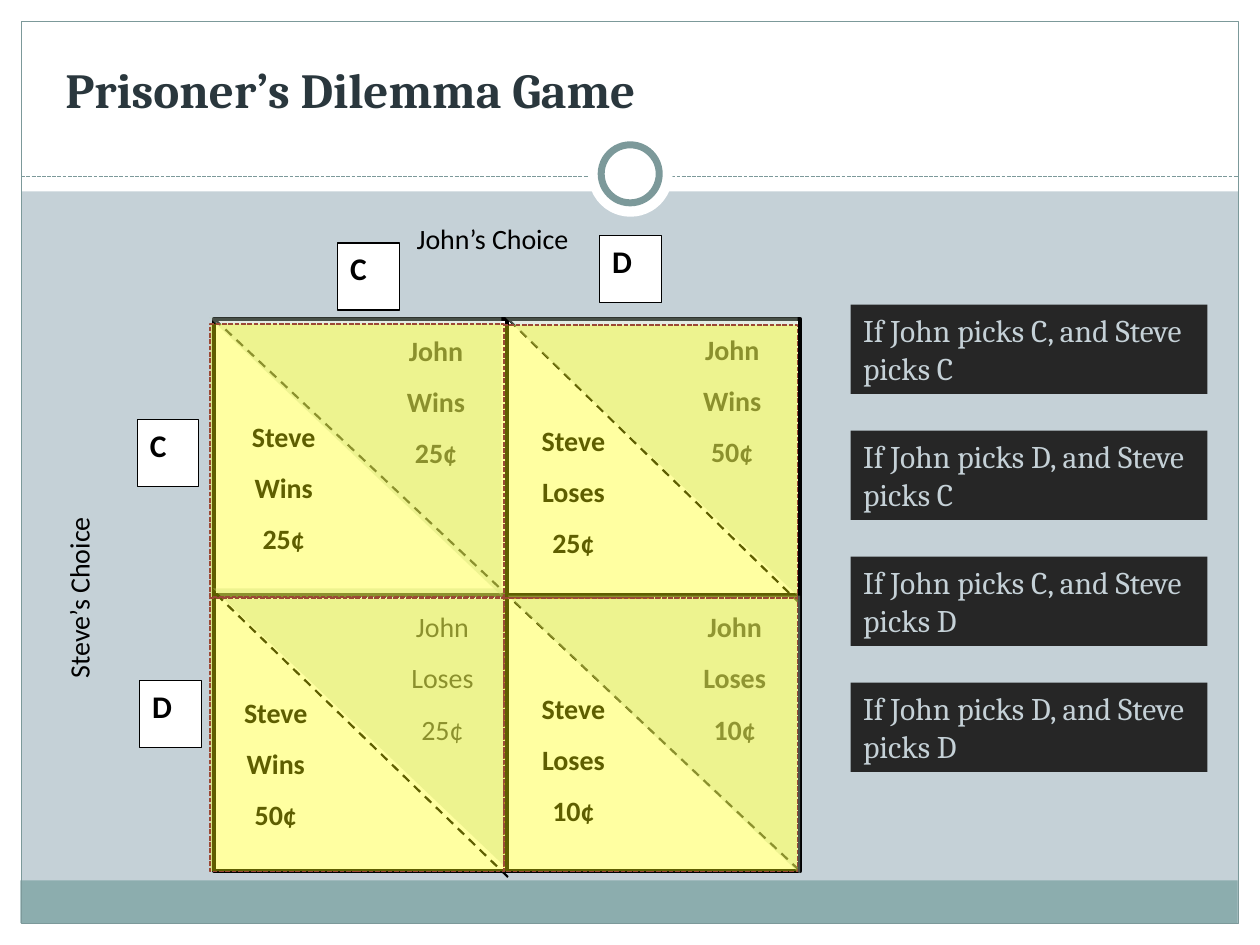
from pptx import Presentation
from pptx.dml.color import RGBColor
from pptx.enum.dml import MSO_LINE_DASH_STYLE as Dash
from pptx.enum.shapes import MSO_CONNECTOR as Link, MSO_SHAPE as Shape
from pptx.enum.text import MSO_ANCHOR as Anchor, MSO_AUTO_SIZE as Fit, PP_ALIGN as Align
from pptx.oxml.ns import qn
from pptx.util import Cm, Pt
from lxml.etree import SubElement

rgb = RGBColor.from_string
BLACK, WHITE, TEAL, MIST = "000000", "FFFFFF", "7C999A", "C5D1D7"


def paint(part, fill=None, alpha=None, line=None, width=0.75, dash=None):
    part.shadow.inherit = False
    if fill:
        part.fill.solid()
        part.fill.fore_color.rgb = rgb(fill)
        if alpha:
            color = part.fill._xPr.find(qn("a:solidFill"))[0]
            SubElement(color, qn("a:alpha"), val=str(alpha * 1000))
    else:
        part.fill.background()
    if line:
        part.line.color.rgb = rgb(line)
        part.line.width = Pt(width)
        part.line.dash_style = dash
    else:
        part.line.fill.background()


def write(part, lines, color=BLACK, align=Align.LEFT, after=10, frame=None, **font):
    text = part.text_frame
    frame_format = {"word_wrap": True, "vertical_anchor": Anchor.TOP} | (frame or {})
    for key, value in frame_format.items():
        setattr(text, key, value)
    text.text = "\n".join(lines)
    font_format = {"name": "Calibri", "size": Pt(16), "bold": False} | font
    for paragraph in text.paragraphs:
        paragraph.alignment = align
        paragraph.space_after = Pt(after)
        run_font = paragraph.runs[0].font
        run_font.color.rgb = rgb(color)
        for key, value in font_format.items():
            setattr(run_font, key, value)


deck = Presentation()
deck.slide_width, deck.slide_height = Cm(25.4), Cm(19.05)
slide = deck.slides.add_slide(deck.slide_layouts[6])
slide.background.fill.solid()
slide.background.fill.fore_color.rgb = rgb(MIST)
shapes = slide.shapes

borders = [
    ((0, 18.62, 25.4, 0.43), {"fill": WHITE}),
    ((0, 0, 25.4, 3.86), {"fill": WHITE}),
    ((0, 0, 0.43, 19.05), {"fill": WHITE}),
    ((24.97, 0, 0.43, 19.05), {"fill": WHITE}),
    ((0.41, 17.75, 24.54, 0.86), {"fill": "8CADAE"}),
    ((0.43, 0.43, 24.54, 18.19), {"line": TEAL}),
]
for box, look in borders:
    paint(shapes.add_shape(Shape.RECTANGLE, *map(Cm, box)), **look)

left, top, width, height = 4.32, 6.43, 11.81, 11.13
right, bottom = left + width, top + height
middle_x, middle_y = left + width / 2, top + height / 2

header_rule = shapes.add_connector(Link.STRAIGHT, Cm(0.43), Cm(3.56), Cm(24.97), Cm(3.56))
for box, look in [((11.86, 2.67, 1.7, 1.7), {}),
                  ((12.12, 2.92, 1.17, 1.17), {"line": TEAL, "width": 4})]:
    paint(shapes.add_shape(Shape.OVAL, *map(Cm, box)), fill=WHITE, **look)

board = shapes.add_shape(Shape.RECTANGLE, Cm(left), Cm(top), Cm(width), Cm(height))
paint(board, WHITE, line=BLACK, width=2.5)

rules = [(header_rule, TEAL, 0.75, Dash.SQUARE_DOT)]
for ends, sides in [((left, middle_y, right, middle_y), (1, 3)),
                    ((middle_x, top, middle_x, bottom), (0, 2))]:
    divider = shapes.add_connector(Link.STRAIGHT, *map(Cm, ends))
    divider.begin_connect(board, sides[0])
    divider.end_connect(board, sides[1])
    rules.append((divider, BLACK, 2.5, None))
for ends in [(10.24, 17.68, left, 11.94), (right, 12.17, 10.24, top),
             (left, top, right, bottom)]:
    diagonal = shapes.add_connector(Link.STRAIGHT, *map(Cm, ends))
    rules.append((diagonal, BLACK, 1.25, Dash.DASH))
for rule, color, weight, dash in rules:
    rule.line.color.rgb = rgb(color)
    rule.line.width = Pt(weight)
    rule.line.dash_style = dash
    SubElement(rule._element.spPr, qn("a:effectLst"))

payoffs = [
    (7.24, 6.6, "John Wins 25¢", BLACK, True),
    (7.37, 12.17, "John Loses 25¢", BLACK, False),
    (13.21, 6.58, "John Wins 50¢", BLACK, True),
    (13.26, 12.17, "John Loses 10¢", "0D0D0D", True),
    (10.01, 8.41, "Steve Loses 25¢", BLACK, True),
    (4.01, 13.89, "Steve Wins 50¢", BLACK, True),
    (10.01, 13.82, "Steve Loses 10¢", BLACK, True),
    (4.17, 8.33, "Steve Wins 25¢", BLACK, True),
]
for x, y, outcome, color, bold in payoffs:
    payoff = shapes.add_textbox(Cm(x), Cm(y), Cm(3.1), Cm(3.38))
    write(payoff, outcome.split(), color, Align.CENTER, bold=bold)

john_axis = shapes.add_textbox(Cm(8.15), Cm(4.34), Cm(5.28), Cm(1.35))
write(john_axis, ["John’s Choice"])
steve_axis = shapes.add_textbox(Cm(1.12), Cm(7.85), Cm(1.24), Cm(6.07))
write(steve_axis, ["Steve’s Choice"])
steve_axis.text_frame._txBody.bodyPr.set("vert", "vert270")

for x, y, choice in [(6.81, 4.9, "C"), (2.77, 8.46, "C"), (12.09, 4.75, "D"), (2.82, 13.72, "D")]:
    label = shapes.add_shape(Shape.RECTANGLE, Cm(x), Cm(y), Cm(1.24), Cm(1.35))
    paint(label, WHITE, line=BLACK)
    write(label, [choice], size=Pt(18), bold=True)

for x, y in [(4.29, 11.86), (10.19, 6.4), (4.22, 6.4), (10.24, 12.01)]:
    outline = shapes.build_freeform(Cm(x), Cm(y))
    outline.add_line_segments([(Cm(x + 5.89), Cm(y)), (Cm(x + 5.89), Cm(y + 5.61))])
    paint(outline.convert_to_shape(), "BCD0BA", 39)

title = shapes.add_textbox(Cm(1.07), Cm(1.07), Cm(14), Cm(1.45))
write(title, ["Prisoner’s Dilemma Game"], "2A373D", after=0, name="Cambria", size=Pt(28), bold=True,
      frame={"word_wrap": False, "auto_size": Fit.SHAPE_TO_FIT_TEXT})

cases = [("C", "C", 4.24, 6.53), ("D", "C", 10.16, 6.55),
         ("C", "D", 4.24, 12.06), ("D", "D", 10.16, 12.06)]
for row, (john, steve, x, y) in enumerate(cases):
    case = shapes.add_shape(Shape.RECTANGLE, Cm(17.15), Cm(6.14 + 2.54 * row), Cm(7.19), Cm(1.8))
    paint(case, "262626")
    write(case, [f"If John picks {john}, and Steve picks {steve}"], MIST, after=0, name="Cambria",
          size=Pt(18), frame={"auto_size": Fit.SHAPE_TO_FIT_TEXT})
    highlight = shapes.add_shape(Shape.RECTANGLE, Cm(x), Cm(y), Cm(5.92), Cm(5.51))
    paint(highlight, "FFFF00", 37, "9B4936", 0.9, Dash.SQUARE_DOT)

deck.save("out.pptx")
